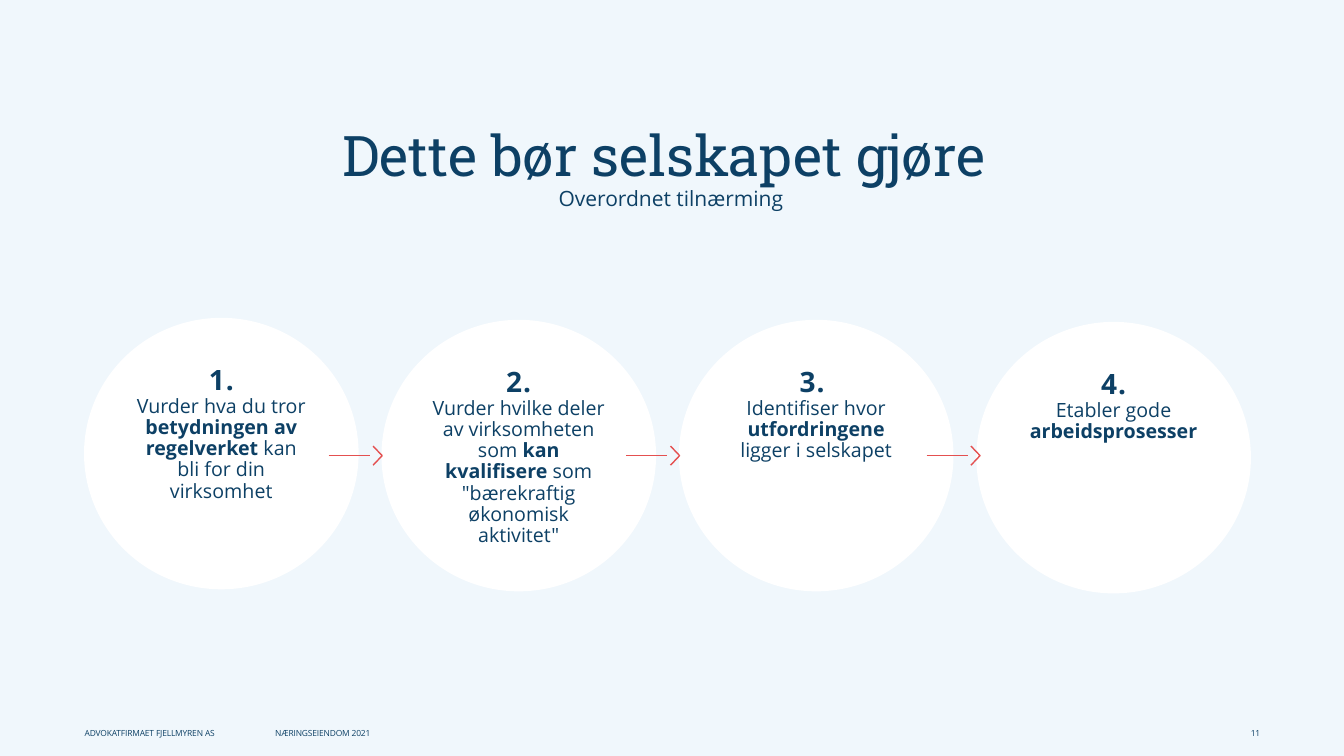
from dataclasses import dataclass

from lxml.etree import SubElement
from pptx import Presentation
from pptx.dml.color import RGBColor
from pptx.enum.shapes import MSO_CONNECTOR, MSO_SHAPE
from pptx.enum.text import MSO_ANCHOR, MSO_AUTO_SIZE, PP_ALIGN
from pptx.oxml.ns import qn
from pptx.util import Inches, Pt


@dataclass(frozen=True)
class Theme:
    background: RGBColor = RGBColor(0xF0, 0xF7, 0xFC)
    navy: RGBColor = RGBColor(0x0D, 0x40, 0x65)
    white: RGBColor = RGBColor(0xFF, 0xFF, 0xFF)
    red: RGBColor = RGBColor(0xE4, 0x50, 0x50)
    heading_font: str = "Roboto Slab"
    body_font: str = "Open Sans"
    title_size: int = 40
    subtitle_size: int = 15
    number_size: int = 20
    step_size: int = 14
    footer_size: int = 6
    line_spacing: float = 0.9


class SlideBuilder:
    def __init__(self, page, theme):
        self.page = page
        self.theme = theme
        page.background.fill.solid()
        page.background.fill.fore_color.rgb = theme.background

    def style(self, span, size, bold=False, family=None, spacing=0):
        span.font.name = family or self.theme.body_font
        span.font.size = Pt(size)
        span.font.bold = bold
        span.font.color.rgb = self.theme.navy
        if spacing:
            span.font._element.set("spc", str(spacing))

    def frame(self, box, inset, anchor):
        frame = box.text_frame
        frame.word_wrap = True
        frame.auto_size = MSO_AUTO_SIZE.NONE
        frame.vertical_anchor = anchor
        frame.margin_left = frame.margin_right = Inches(inset)
        frame.margin_top = frame.margin_bottom = Inches(inset)
        return frame

    def center(self, para):
        para.alignment = PP_ALIGN.CENTER
        para.line_spacing = self.theme.line_spacing
        para.space_before = Pt(0)

    def title(self, heading, subtitle):
        box = self.page.shapes.title
        box.left, box.top = Inches(0.92), Inches(1.27)
        box.width, box.height = Inches(11.47), Inches(1.06)
        para = self.frame(box, 0, MSO_ANCHOR.TOP).paragraphs[0]
        para.text = f"{heading} \v{subtitle}"
        self.center(para)
        first, second = para.runs
        self.style(first, self.theme.title_size, family=self.theme.heading_font)
        self.style(second, self.theme.subtitle_size)

    def step(self, left, top, number, parts):
        circle = self.page.shapes.add_shape(
            MSO_SHAPE.OVAL, Inches(left), Inches(top), Inches(2.71), Inches(2.68))
        circle.shadow.inherit = False
        circle.fill.solid()
        circle.fill.fore_color.rgb = self.theme.white
        circle.line.color.rgb = self.theme.white
        circle.line.width = Pt(1)
        frame = self.frame(circle, 0.08, MSO_ANCHOR.TOP)
        frame.text = number
        self.center(frame.paragraphs[0])
        self.style(frame.paragraphs[0].runs[0], self.theme.number_size, True, spacing=70)
        para = frame.add_paragraph()
        self.center(para)
        for index, words in enumerate(parts):
            span = para.add_run()
            span.text = words
            self.style(span, self.theme.step_size, bold=index % 2 == 1)

    def arrow(self, left, middle):
        shaft = self.page.shapes.add_connector(
            MSO_CONNECTOR.STRAIGHT, Inches(left), Inches(middle),
            Inches(left + 0.41), Inches(middle))
        SubElement(shaft._element.spPr, qn("a:effectLst"))
        tip = left + 0.53
        builder = self.page.shapes.build_freeform(
            Inches(tip - 0.09), Inches(middle + 0.095))
        builder.add_line_segments(
            [(Inches(tip), Inches(middle)),
             (Inches(tip - 0.09), Inches(middle - 0.095))], close=False)
        head = builder.convert_to_shape()
        head.shadow.inherit = False
        head.fill.background()
        for part in (shaft, head):
            part.line.color.rgb = self.theme.red
            part.line.width = Pt(1)

    def footer(self, left, width, text, tab=None):
        box = self.page.shapes.add_textbox(
            Inches(left), Inches(7.2), Inches(width), Inches(0.12))
        para = self.frame(box, 0, MSO_ANCHOR.BOTTOM).paragraphs[0]
        para.text = text
        if tab:
            para.alignment = PP_ALIGN.RIGHT
            stops = SubElement(para._p.get_or_add_pPr(), qn("a:tabLst"))
            SubElement(stops, qn("a:tab"), pos=str(Inches(tab)), algn="r")
        for span in para.runs:
            self.style(span, self.theme.footer_size, spacing=-10)


STEPS = [
    (3.16, "1.", ["Vurder hva du tror ", "betydningen av regelverket ",
                  "kan bli for din virksomhet"]),
    (3.18, "2.", ["Vurder hvilke deler av virksomheten som ", "kan kvalifisere ",
                  'som "bærekraftig økonomisk aktivitet"']),
    (3.18, "3. ", ["Identifiser hvor", " utfordringene ", "ligger i selskapet"]),
    (3.2, "4.", ["Etabler gode", " arbeidsprosesser"]),
]


def main():
    deck = Presentation()
    deck.slide_width, deck.slide_height = Inches(13.33), Inches(7.5)
    page = deck.slides.add_slide(deck.slide_layouts[5])
    builder = SlideBuilder(page, Theme())
    builder.title("Dette bør selskapet gjøre", "Overordnet tilnærming")
    for index, (top, number, parts) in enumerate(STEPS):
        builder.step(0.84 + 2.95 * index, top, number, parts)
    for left in (3.26, 6.21, 9.19):
        builder.arrow(left, 4.52)
    builder.footer(2.73, 8.53, "NÆRINGSEIENDOM 2021")
    builder.footer(0.84, 11.66, "ADVOKATFIRMAET FJELLMYREN AS\t11", tab=11.66)
    deck.save("out.pptx")


if __name__ == "__main__":
    main()
